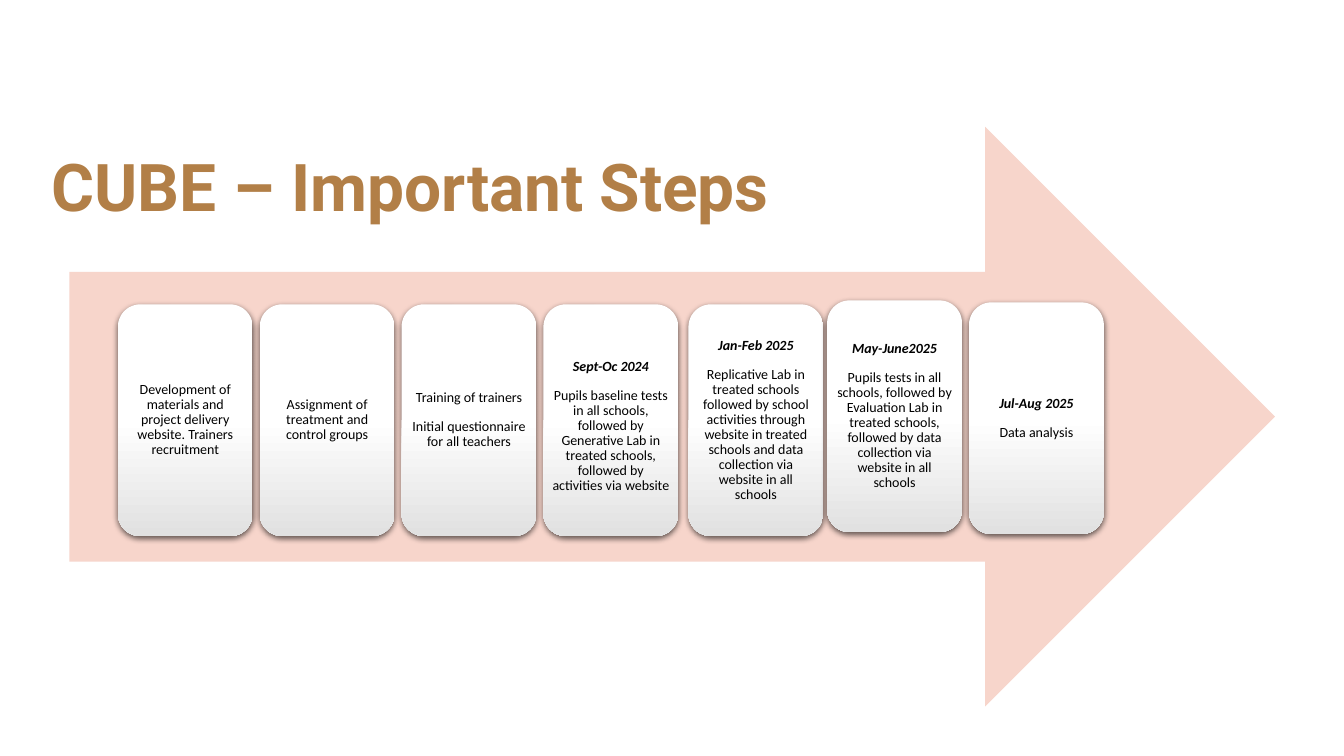
import copy

import lxml.etree
import pptx
import pptx.dml.color
import pptx.enum.shapes
import pptx.enum.text
import pptx.oxml.ns
import pptx.util

Cm = pptx.util.Cm
Pt = pptx.util.Pt
SHAPES = pptx.enum.shapes.MSO_SHAPE
ANCHOR = pptx.enum.text.MSO_ANCHOR
ALIGN = pptx.enum.text.PP_ALIGN
qn = pptx.oxml.ns.qn

CARD_LEFT, CARD_STEP = 2.97, 3.575
CARD_WIDTH, CARD_HEIGHT = 3.4, 5.84
CARD_STOPS = [(0, "FFFFFF"), (0.5, "FFFFFF"), (1, "E1E1E1")]

# date, paragraphs, top of card, shift right, extra inset above the text
STEPS = [
    ("", ["Development of materials and project delivery website. Trainers recruitment"],
     7.67, 0, 0),
    ("", ["Assignment of treatment and control groups"], 7.67, 0, 0),
    ("", ["Training of trainers", "Initial questionnaire for all teachers"], 7.67, 0, 0),
    ("Sept-Oc 2024",
     ["Pupils baseline tests in all schools, followed by Generative Lab in treated "
      "schools, followed by activities via website"], 7.67, 0, 0.3),
    ("Jan-Feb 2025",
     ["Replicative Lab in treated schools followed by school activities through website "
      "in treated schools and data collection via website in all schools"], 7.67, 0.08, 0),
    ("May-June2025",
     ["Pupils tests in all schools, followed by Evaluation Lab in treated schools, "
      "followed by data collection via website in all schools"], 7.57, 0, 0),
    ("Jul-Aug 2025", ["Data analysis"], 7.62, 0, 0),
]


def color(value):
    return pptx.dml.color.RGBColor.from_string(value)


def apply(target, values):
    for name, value in values.items():
        setattr(target, name, value)


def set_font(font, rgb, **values):
    apply(font, values)
    font.color.rgb = color(rgb)


def add_title(page, text):
    title = page.shapes.title
    apply(title, {"left": Cm(1.17), "top": Cm(3.71), "width": Cm(32.92), "height": Cm(2.16)})
    frame = title.text_frame
    frame.text = text
    apply(frame, {"vertical_anchor": ANCHOR.MIDDLE, "word_wrap": True,
                  "auto_size": pptx.enum.text.MSO_AUTO_SIZE.NONE,
                  "margin_left": Cm(0.13), "margin_right": Cm(0.13),
                  "margin_top": Cm(0.13), "margin_bottom": Cm(0.13)})
    para = frame.paragraphs[0]
    apply(para, {"alignment": ALIGN.LEFT, "line_spacing": 0.9})
    set_font(para.font, "B27F47", name="Roboto", size=Pt(47), bold=True)


def add_shape(page, kind, left, top, width, height):
    """Add a preset shape without line or shadow."""
    shape = page.shapes.add_shape(kind, Cm(left), Cm(top), Cm(width), Cm(height))
    shape.line.fill.background()
    shape.shadow.inherit = False
    return shape


def add_arrow(page):
    arrow = add_shape(page, SHAPES.RIGHT_ARROW, 1.75, 3.2, 30.38, 14.6)
    arrow.fill.solid()
    arrow.fill.fore_color.rgb = color("F7D5CB")


def fill_gradient(shape, stops):
    """Fill from top to bottom through three stops."""
    shape.fill.gradient()
    shape.fill.gradient_angle = 270
    stop_list = shape.element.find(".//" + qn("a:gsLst"))
    stop_list.insert(1, copy.deepcopy(stop_list[0]))
    for stop, (position, rgb) in zip(shape.fill.gradient_stops, stops):
        stop.position = position
        stop.color.rgb = color(rgb)


def add_shadow(shape):
    effects = shape.element.spPr.find(qn("a:effectLst"))
    shadow = lxml.etree.SubElement(
        effects, qn("a:outerShdw"), blurRad=str(Pt(4.5)), dist=str(Pt(1.5)),
        dir="5400000", algn="ctr", rotWithShape="0")
    tone = lxml.etree.SubElement(shadow, qn("a:srgbClr"), val="000000")
    lxml.etree.SubElement(tone, qn("a:alpha"), val="62000")


def add_card(page, index, date, texts, top, shift, extra):
    left = CARD_LEFT + index * CARD_STEP + shift
    card = add_shape(page, SHAPES.ROUNDED_RECTANGLE, left, top, CARD_WIDTH, CARD_HEIGHT)
    card.adjustments[0] = 0.167
    fill_gradient(card, CARD_STOPS)
    add_shadow(card)
    frame = card.text_frame
    apply(frame, {"word_wrap": True, "vertical_anchor": ANCHOR.MIDDLE,
                  "margin_left": Cm(0.05), "margin_right": Cm(0.05),
                  "margin_top": Cm(0.05 + extra), "margin_bottom": Cm(0.05)})
    lines = [date] * bool(date) + texts
    for number, line in enumerate(lines):
        para = frame.add_paragraph() if number else frame.paragraphs[0]
        para.text = line
        apply(para, {"alignment": ALIGN.CENTER, "line_spacing": 0.89,
                     "space_before": Pt(2 if number else 0), "space_after": Pt(8)})
        is_date = line == date
        set_font(para.font, "000000", name="Calibri", size=Pt(10),
                 bold=is_date, italic=is_date)


def main():
    deck = pptx.Presentation()
    apply(deck, {"slide_width": Cm(33.87), "slide_height": Cm(19.05)})
    page = deck.slides.add_slide(deck.slide_layouts.get_by_name("Title Only"))
    add_title(page, "CUBE – Important Steps")
    add_arrow(page)
    for index, step in enumerate(STEPS):
        add_card(page, index, *step)
    deck.save("out.pptx")


if __name__ == "__main__":
    main()
